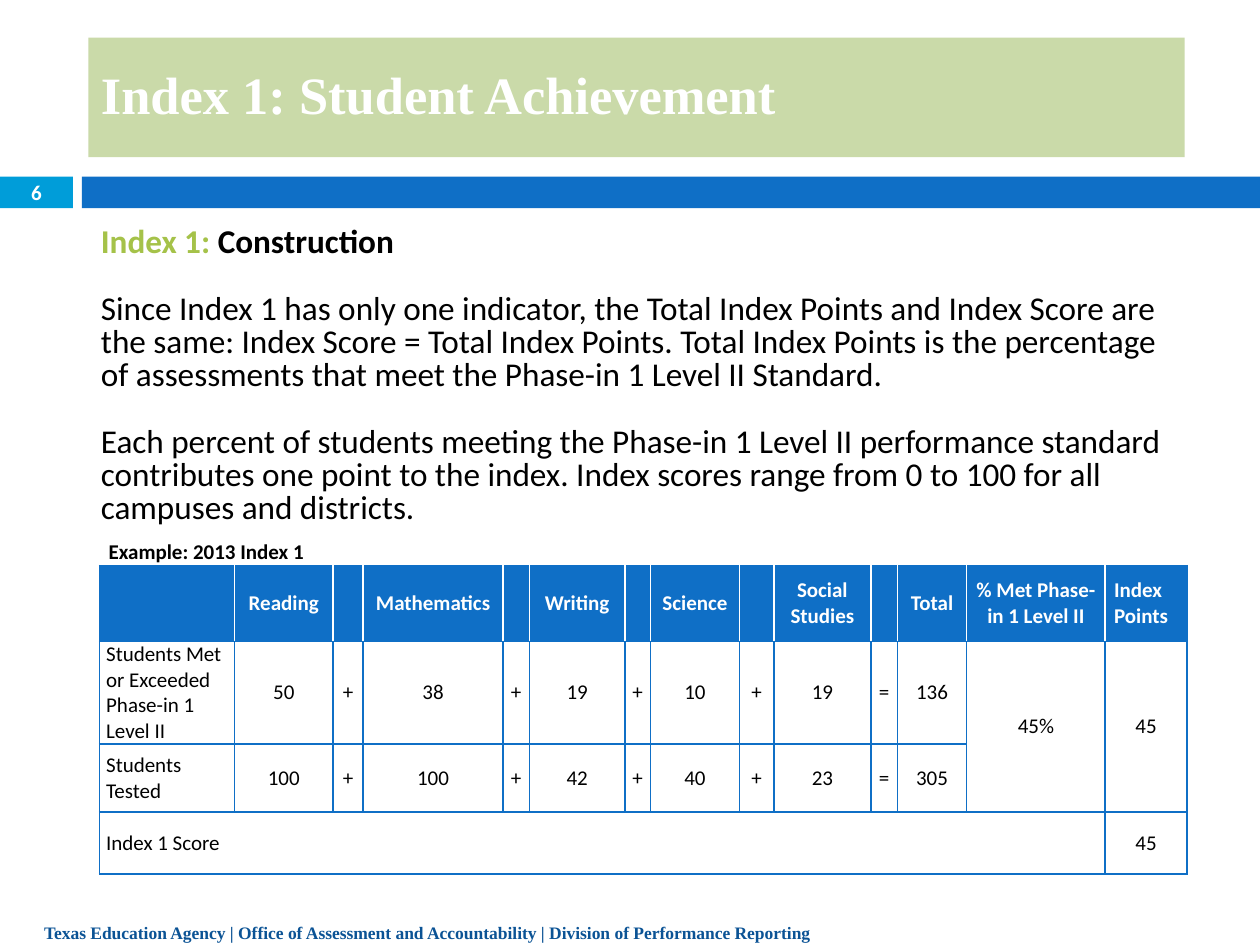
"""Build the Index 1 student achievement slide."""
from dataclasses import dataclass

import lxml.etree
import pptx
import pptx.dml.color
import pptx.enum.shapes
import pptx.enum.text
import pptx.oxml.ns
import pptx.util

Cm = pptx.util.Cm
Pt = pptx.util.Pt
ALIGN = pptx.enum.text.PP_ALIGN
ANCHOR = pptx.enum.text.MSO_ANCHOR

HUES = {
    "blue": "0F6FC6", "cyan": "009DD9", "sage": "CADAA9", "lime": "A5C249",
    "navy": "0B5395", "white": "FFFFFF", "black": "000000",
}
SANS, SERIF = "Calibri", "Times New Roman"


@dataclass
class Box:
    left: float
    top: float
    width: float
    height: float


@dataclass
class Bar:
    box: Box
    hue: str
    text: str = ""


@dataclass
class Row:
    height: float
    cells: list[str]
    head: bool = False


BARS = [
    Bar(Box(0, 3.56, 1.47, 0.64), "cyan", "6"),
    Bar(Box(1.65, 3.56, 23.75, 0.64), "blue"),
]
WIDTHS = [2.72, 1.98, 0.61, 2.82, 0.53, 1.93, 0.51,
          1.8, 0.69, 1.96, 0.53, 1.4, 2.79, 1.65]
LAST = len(WIDTHS) - 1
SIGNS = ["+", "+", "+", "+", "="]


def weave(label: str, nums: list[str], signs: list[str], ends: list[str]) -> list[str]:
    """Put a sign between each pair of numbers in a row."""
    pairs = [part for pair in zip(nums, signs) for part in pair]
    return [label, *pairs, nums[-1], *ends]


ROWS = [
    Row(0.66, ["Example: 2013 Index 1"] + [""] * LAST),
    Row(1.53, weave("", ["Reading", "Mathematics", "Writing", "Science", "Social\nStudies", "Total"],
                    [""] * 5, ["% Met Phase-in 1 Level II", "Index Points"]), True),
    Row(2.07, weave("Students Met or Exceeded Phase-in 1 Level II",
                    ["50", "38", "19", "10", "19", "136"], SIGNS, ["45%", "45"])),
    Row(1.37, weave("Students Tested", ["100", "100", "42", "40", "23", "305"], SIGNS, ["", ""])),
    Row(1.25, ["Index 1 Score"] + [""] * (LAST - 1) + ["45"]),
]
SPANS = [((0, 0), (0, LAST)), ((2, LAST - 1), (3, LAST - 1)),
         ((2, LAST), (3, LAST)), ((4, 0), (4, LAST - 1))]


def tint(hue: str) -> pptx.dml.color.RGBColor:
    """Look up a colour by name."""
    return pptx.dml.color.RGBColor.from_string(HUES[hue])


def area(box: Box) -> tuple:
    """Turn a box into slide lengths."""
    return Cm(box.left), Cm(box.top), Cm(box.width), Cm(box.height)


def place(shape, box: Box) -> None:
    """Move and size a shape."""
    shape.left, shape.top, shape.width, shape.height = area(box)


def style(para, size: float, hue: str, face: str = SANS, bold: bool = False,
          align=ALIGN.LEFT, lead: float | None = None) -> None:
    """Set the font and spacing of a paragraph."""
    font = para.font
    font.size, font.name, font.bold = Pt(size), face, bold
    font.color.rgb = tint(hue)
    para.alignment = align
    if lead:
        para.line_spacing = Pt(lead)
    para.space_before = para.space_after = Pt(0)


def draw_bar(slide, bar: Bar) -> None:
    """Draw a flat bar with an optional label."""
    shape = slide.shapes.add_shape(pptx.enum.shapes.MSO_SHAPE.RECTANGLE, *area(bar.box))
    shape.shadow.inherit = False
    shape.fill.solid()
    shape.fill.fore_color.rgb = tint(bar.hue)
    shape.line.fill.background()
    if bar.text:
        frame = shape.text_frame
        frame.margin_top = frame.margin_bottom = 0
        frame.vertical_anchor = ANCHOR.MIDDLE
        frame.text = bar.text
        style(frame.paragraphs[0], 12, "white", bold=True, align=ALIGN.CENTER)


def draw_title(slide) -> None:
    """Fill the title band."""
    title = slide.shapes.title
    place(title, Box(1.78, 0.76, 22.1, 2.41))
    title.fill.solid()
    title.fill.fore_color.rgb = tint("sage")
    frame = title.text_frame
    frame.text = "Index 1: Student Achievement"
    frame.auto_size = pptx.enum.text.MSO_AUTO_SIZE.NONE
    frame.vertical_anchor = ANCHOR.MIDDLE
    style(frame.paragraphs[0], 30, "white", SERIF, True, lead=32)


def draw_body(slide) -> None:
    """Write the three body paragraphs without bullets."""
    body = slide.placeholders[1]
    place(body, Box(1.78, 4.45, 22.66, 6.17))
    frame = body.text_frame
    frame.auto_size = pptx.enum.text.MSO_AUTO_SIZE.NONE
    frame.vertical_anchor = ANCHOR.TOP
    head = frame.paragraphs[0]
    lead = head.add_run()
    lead.text = "Index 1: "
    head.add_run().text = "Construction"
    same = frame.add_paragraph()
    same.add_run().text = ("Since Index 1 has only one indicator, the Total Index Points and Index Score "
                           "are the same: Index Score = Total Index Points. Total Index Points is the percentage")
    same.add_line_break()
    same.add_run().text = "of assessments that meet the Phase-in 1 Level II Standard."
    frame.add_paragraph().text = (
        "Each percent of students meeting the Phase-in 1 Level II performance standard contributes "
        "one point to the index. Index scores range from 0 to 100 for all campuses and districts.")
    for para in frame.paragraphs:
        first = para.text.startswith("Index")
        style(para, 19, "black", bold=first, lead=19)
        para.space_before = Pt(0 if first else 19)
        props = para._p.get_or_add_pPr()
        props.set("marL", "0")
        props.set("indent", "0")
        props.insert_element_before(props.makeelement(pptx.oxml.ns.qn("a:buNone")),
                                    "a:tabLst", "a:defRPr", "a:extLst")
    lead.font.color.rgb = tint("lime")


def edge(cell, sides: dict[str, str]) -> None:
    """Rule the named sides of a cell."""
    props = cell._tc.get_or_add_tcPr()
    for side, hue in sides.items():
        line = lxml.etree.SubElement(props, pptx.oxml.ns.qn(f"a:ln{side}"), w=str(Pt(1)))
        fill = lxml.etree.SubElement(line, pptx.oxml.ns.qn("a:solidFill"))
        lxml.etree.SubElement(fill, pptx.oxml.ns.qn("a:srgbClr"), val=HUES[hue])


def draw_cell(cell, row: Row, top: bool, col: int) -> None:
    """Fill, rule and write one table cell."""
    text = row.cells[col]
    sides = {"B": "blue"} if top else {
        "L": "white" if row.head and col > 0 else "blue",
        "R": "white" if row.head and col < LAST else "blue",
        "T": "blue", "B": "blue"}
    edge(cell, sides)
    if row.head:
        cell.fill.solid()
        cell.fill.fore_color.rgb = tint("blue")
    else:
        cell.fill.background()
    sign = text in ("+", "=")
    cell.margin_left = Cm(0 if sign else 0.13 if col == 0 and not top else 0.18)
    cell.margin_right = Cm(0 if sign else 0.18)
    cell.margin_top = cell.margin_bottom = 0
    cell.vertical_anchor = ANCHOR.BOTTOM if top else ANCHOR.MIDDLE
    cell.text = text
    left = col == 0 or row.head and col == LAST
    for para in cell.text_frame.paragraphs:
        style(para, 12, "white" if row.head else "black", bold=row.head or top,
              align=ALIGN.LEFT if left else ALIGN.CENTER, lead=13 if top else None)


def draw_table(slide) -> None:
    """Draw the example score table."""
    box = Box(2.01, 10.74, sum(WIDTHS), sum(row.height for row in ROWS))
    table = slide.shapes.add_table(len(ROWS), len(WIDTHS), *area(box)).table
    table.first_row = table.horz_banding = False
    for col, width in enumerate(WIDTHS):
        table.columns[col].width = Cm(width)
    for num, row in enumerate(ROWS):
        table.rows[num].height = Cm(row.height)
        for col in range(len(WIDTHS)):
            draw_cell(table.cell(num, col), row, num == 0, col)
    for start, end in SPANS:
        table.cell(*start).merge(table.cell(*end))


def draw_foot(slide) -> None:
    """Write the agency line at the bottom."""
    frame = slide.shapes.add_textbox(*area(Box(0.64, 17.96, 22.86, 1.04))).text_frame
    frame.word_wrap = True
    frame.text = ("Texas Education Agency | Office of Assessment and Accountability | "
                  "Division of Performance Reporting")
    style(frame.paragraphs[0], 10, "navy", SERIF, True, lead=26)


def main() -> None:
    """Build and save the deck."""
    deck = pptx.Presentation()
    deck.slide_width, deck.slide_height = Cm(25.4), Cm(19.05)
    slide = deck.slides.add_slide(deck.slide_layouts[1])
    for bar in BARS:
        draw_bar(slide, bar)
    draw_title(slide)
    draw_table(slide)
    draw_body(slide)
    draw_foot(slide)
    deck.save("out.pptx")


if __name__ == "__main__":
    main()
